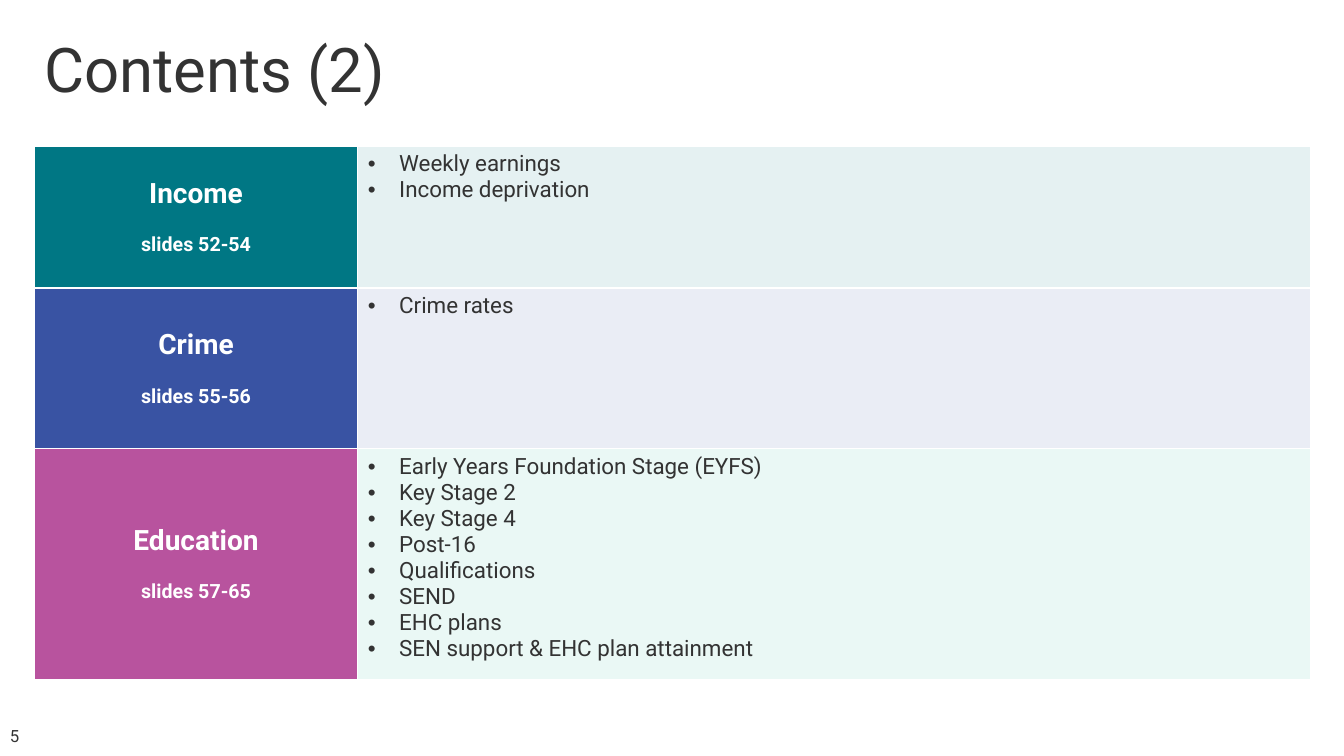
from lxml import etree
from pptx import Presentation
from pptx import util as u
from pptx.dml.color import RGBColor
from pptx.enum import text
from pptx.oxml.ns import qn

WIDTH, HEIGHT = u.Inches(13.33), u.Inches(7.5)
FONT, INK, WHITE = "Roboto", "333333", "FFFFFF"

# Layout in percent of the slide's width and height
LEFT, TOP = 2.55, 19.33
COLUMNS = [24.08, 70.89]
ROWS = [18.8, 21.2, 30.53]

# Heading, slide range, heading fill, topic tint, topics
SECTIONS = [
    ("Income", "slides 52-54", "007784", "007784",
     ["Weekly earnings", "Income deprivation"]),
    ("Crime", "slides 55-56", "3953A3", "3953A3", ["Crime rates"]),
    ("Education", "slides 57-65", "B8539E", "36BBA6",
     ["Early Years Foundation Stage (EYFS)", "Key Stage 2", "Key Stage 4",
      "Post-16", "Qualifications", "SEND", "EHC plans",
      "SEN support & EHC plan attainment"]),
]


def across(percent):
    return round(WIDTH * percent / 100)


def down(percent):
    return round(HEIGHT * percent / 100)


def color(value):
    return RGBColor.from_string(value)


def add_element(parent, tag, **attributes):
    return etree.SubElement(parent, qn(tag), attributes)


def add_run(paragraph, words, size, ink=INK, bold=False):
    run = paragraph.add_run()
    run.text = words
    for name, value in dict(name=FONT, size=u.Pt(size), bold=bold).items():
        setattr(run.font, name, value)
    run.font.color.rgb = color(ink)


def add_label(slide, words, size, left, top, width, height, spacing=1.0):
    box = slide.shapes.add_textbox(
        across(left), down(top), across(width), down(height))
    frame = box.text_frame
    settings = dict(word_wrap=True, vertical_anchor=text.MSO_ANCHOR.MIDDLE)
    for name, value in settings.items():
        setattr(frame, name, value)
    frame.paragraphs[0].line_spacing = spacing
    add_run(frame.paragraphs[0], words, size)


def next_paragraph(frame, index):
    return frame.add_paragraph() if index else frame.paragraphs[0]


def style_cell(cell, fill, borders, opacity=100):
    properties = cell._tc.get_or_add_tcPr()
    for side, points in borders.items():
        line = add_element(properties, f"a:ln{side}", w=str(u.Pt(points)))
        solid = add_element(line, "a:solidFill")
        add_element(solid, "a:srgbClr", val=WHITE)
    cell.fill.solid()
    cell.fill.fore_color.rgb = color(fill)
    if opacity < 100:
        tint = properties.find(qn("a:solidFill")).find(qn("a:srgbClr"))
        add_element(tint, "a:alpha", val=str(opacity * 1000))


def fill_heading(cell, heading, slide_range):
    cell.vertical_anchor = text.MSO_ANCHOR.MIDDLE
    for index, (words, size) in enumerate([(heading, 20), (slide_range, 14)]):
        paragraph = next_paragraph(cell.text_frame, index)
        paragraph.alignment = text.PP_ALIGN.CENTER
        if index:
            paragraph.space_before = u.Pt(16.4)
        add_run(paragraph, words, size, WHITE, True)


def fill_topics(cell, topics):
    indent = u.Inches(0.31)
    for index, topic in enumerate(topics):
        paragraph = next_paragraph(cell.text_frame, index)
        properties = paragraph._p.get_or_add_pPr()
        properties.set("marL", str(indent))
        properties.set("indent", str(-indent))
        add_element(properties, "a:buFont", typeface="Arial")
        add_element(properties, "a:buChar", char="•")
        add_run(paragraph, topic, 16)


def add_contents(slide):
    table = slide.shapes.add_table(
        len(ROWS), len(COLUMNS), across(LEFT), down(TOP),
        across(sum(COLUMNS)), down(sum(ROWS))).table
    table.horz_banding = False
    for column, share in zip(table.columns, COLUMNS):
        column.width = across(share)
    last = len(ROWS) - 1
    for index, section in enumerate(SECTIONS):
        heading, slide_range, fill, tint, topics = section
        table.rows[index].height = down(ROWS[index])
        heading_cell, topics_cell = table.rows[index].cells
        # Inner rules are thicker than the outer frame
        borders = dict(L=1, R=1, T=1.5 if index else 1,
                       B=1.5 if index < last else 1)
        style_cell(heading_cell, fill, borders)
        style_cell(topics_cell, tint, borders, opacity=10)
        fill_heading(heading_cell, heading, slide_range)
        fill_topics(topics_cell, topics)


def main():
    presentation = Presentation()
    presentation.slide_width, presentation.slide_height = WIDTH, HEIGHT
    slide = presentation.slides.add_slide(presentation.slide_layouts[6])
    # Title, contents table and slide number
    add_label(slide, "Contents (2)", 44, LEFT, 0, 86.27, TOP, spacing=0.9)
    add_contents(slide)
    add_label(slide, "5", 12, 0, 94.67, 22.5, 5.33)
    presentation.save("out.pptx")


if __name__ == "__main__":
    main()
